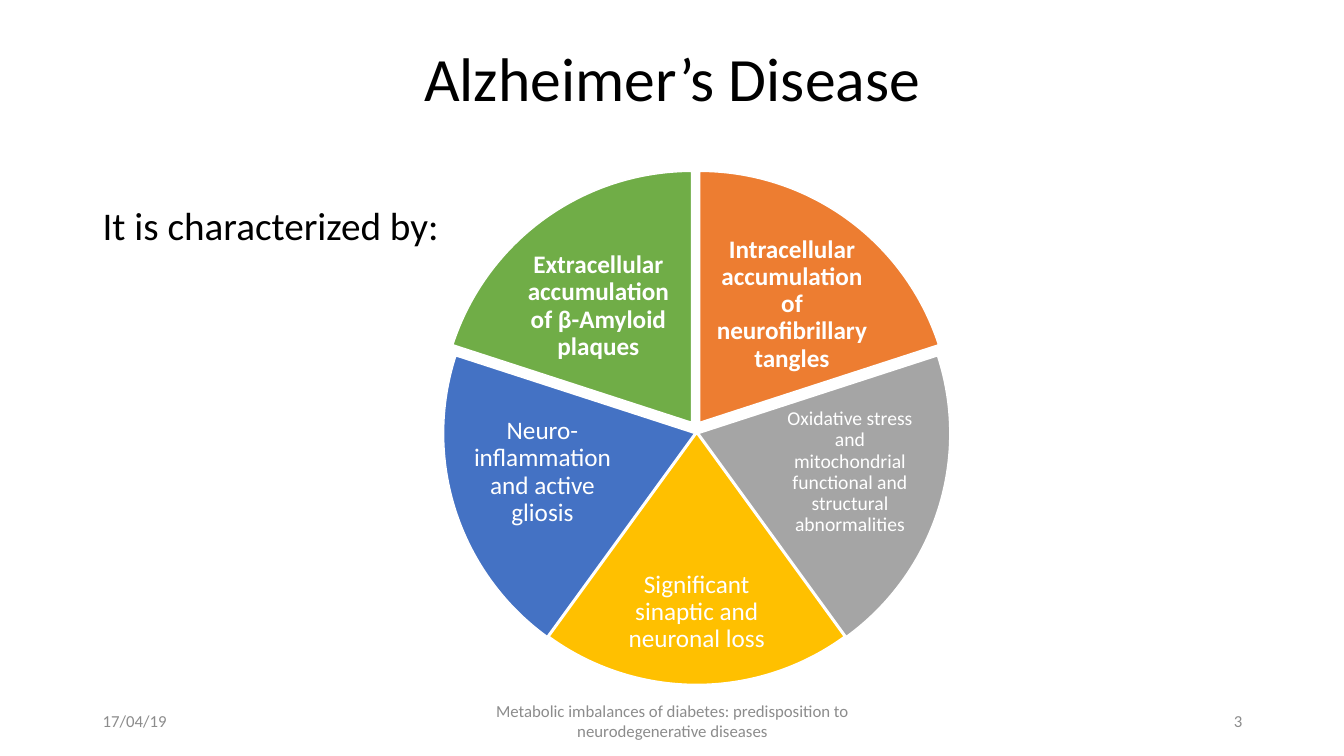
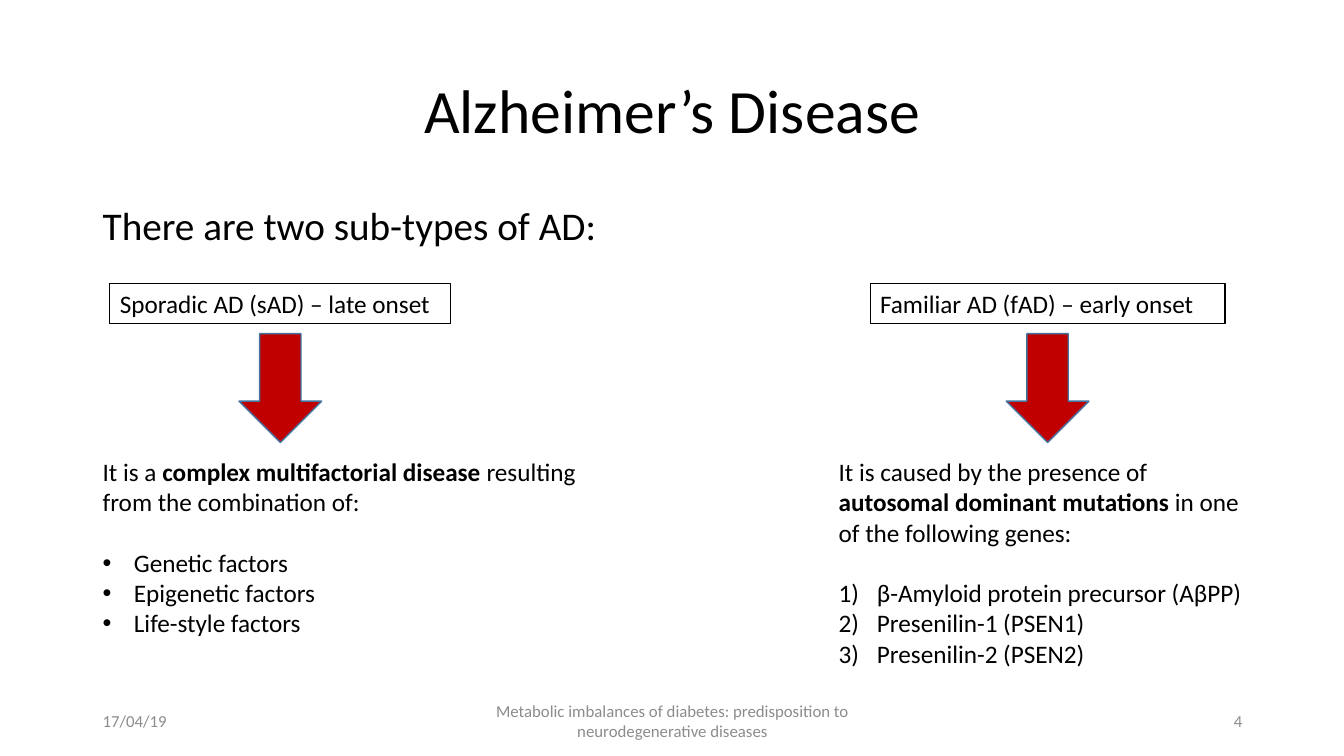
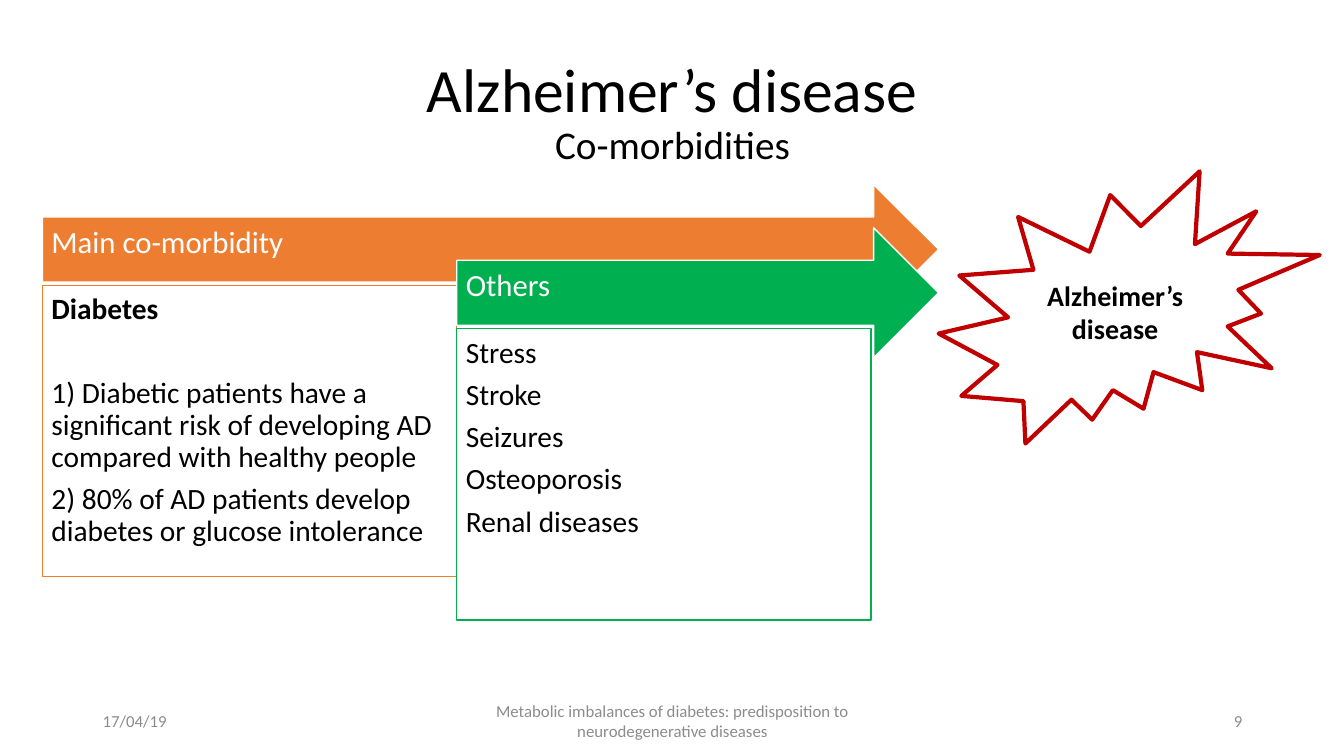
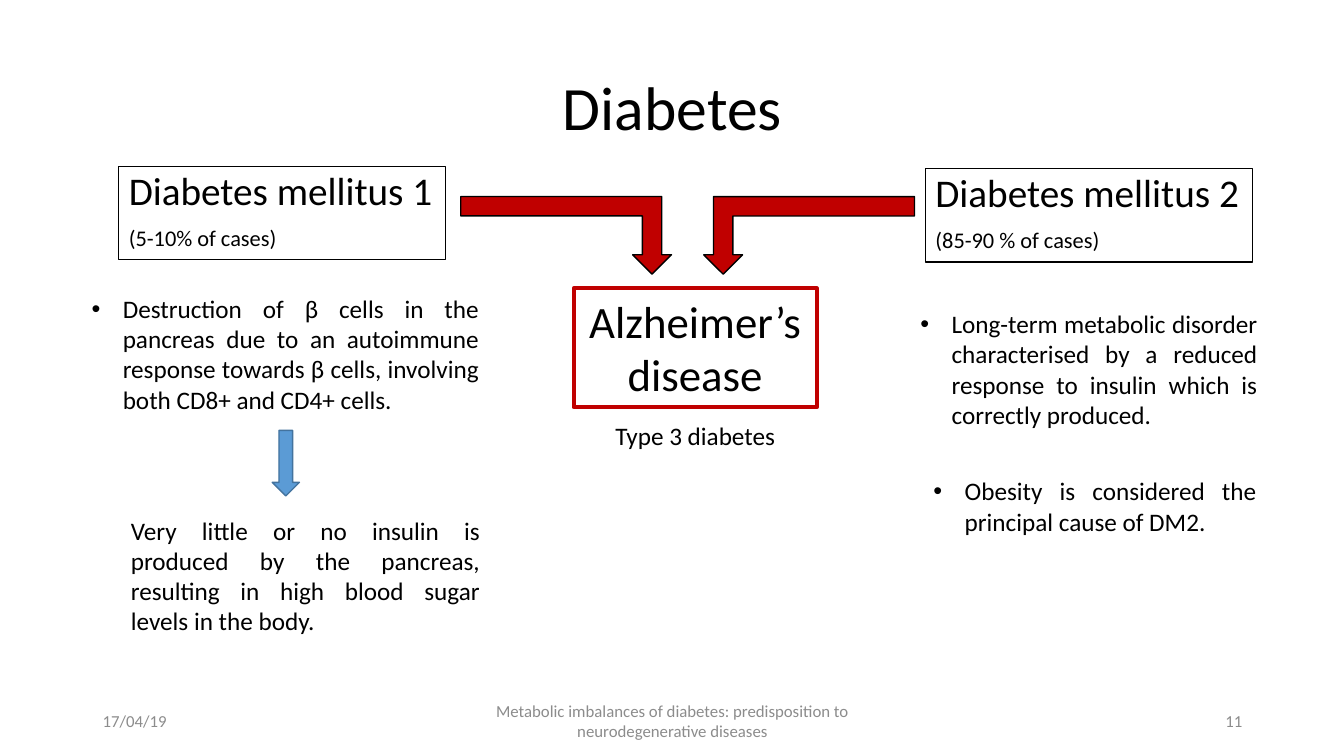
from lxml.etree import SubElement
from pptx import Presentation
from pptx.dml.color import RGBColor
from pptx.enum.shapes import MSO_SHAPE as SHAPE
from pptx.enum.text import MSO_ANCHOR as ANCHOR, PP_ALIGN as ALIGN
from pptx.oxml.ns import qn
from pptx.util import Inches, Pt

BLACK = RGBColor(0x00, 0x00, 0x00)
WHITE = RGBColor(0xFF, 0xFF, 0xFF)
GRAY = RGBColor(0x8C, 0x8C, 0x8C)
SILVER = RGBColor(0xA5, 0xA5, 0xA5)
ORANGE = RGBColor(0xED, 0x7D, 0x31)
YELLOW = RGBColor(0xFF, 0xC0, 0x00)
BLUE = RGBColor(0x44, 0x72, 0xC4)
LIGHT_BLUE = RGBColor(0x5B, 0x9B, 0xD5)
STEEL = RGBColor(0x43, 0x73, 0x9E)
LEAF = RGBColor(0x70, 0xAD, 0x47)
GREEN = RGBColor(0x00, 0xB0, 0x50)
RED = RGBColor(0xC0, 0x00, 0x00)
FONT = "Calibri"


def add_shape(s, kind, box, fill=None, line=BLACK, weight=1, adjust=(), rotation=0):
    sp = s.shapes.add_shape(kind, *map(Inches, box))
    sp.shadow.inherit = False
    sp.rotation = rotation
    for i, value in enumerate(adjust):
        sp.adjustments[i] = value
    if fill is None:
        sp.fill.background()
    else:
        sp.fill.solid()
        sp.fill.fore_color.rgb = fill
    sp.line.color.rgb = line
    sp.line.width = Pt(weight)
    return sp


def add_text(s, text, box=None, sp=None, sizes=(18,), color=BLACK, bold=False,
             align=ALIGN.LEFT, anchor=ANCHOR.TOP, inset=(0.1, 0.05, 0.1, 0.05),
             spacing=1, before=0, after=0, first_after=None,
             bullet=None, bullet_from=0, indent=0.31):
    sp = sp or s.shapes.add_textbox(*map(Inches, box))
    tf = sp.text_frame
    tf.word_wrap = True
    tf.vertical_anchor = anchor
    tf.margin_left, tf.margin_top, tf.margin_right, tf.margin_bottom = map(Inches, inset)
    for i, line in enumerate(text.split("\n")):
        p = tf.add_paragraph() if i else tf.paragraphs[0]
        p.alignment = align
        p.line_spacing = spacing
        p.space_before = Pt(before)
        p.space_after = Pt(after if i or first_after is None else first_after)
        for j, part in enumerate(line.split("*")):
            if part:
                r = p.add_run()
                r.text = part
                r.font.name = FONT
                r.font.size = Pt(sizes[min(i, len(sizes) - 1)])
                r.font.bold = bold or j % 2 == 1
                r.font.color.rgb = color
        if bullet and i >= bullet_from:
            pPr = p._p.get_or_add_pPr()
            pPr.set("marL", str(Inches(indent)))
            pPr.set("indent", str(-Inches(indent)))
            if bullet == "•":
                SubElement(pPr, qn("a:buFont"), typeface="Arial")
                SubElement(pPr, qn("a:buChar"), char=bullet)
            else:
                SubElement(pPr, qn("a:buAutoNum"), type=bullet)
    return sp


prs = Presentation()
prs.slide_width, prs.slide_height = Inches(13.33), Inches(7.5)

slides = []
for title, top, height, number in [
    ("Alzheimer’s Disease", 0.3, 1.01, "3"),
    ("Alzheimer’s Disease", 0.4, 1.45, "4"),
    ("Alzheimer’s disease\nCo-morbidities", 0.4, 1.45, "9"),
    ("Diabetes", 0.37, 1.45, "11"),
]:
    s = prs.slides.add_slide(prs.slide_layouts[6])
    add_text(s, title, (0.92, top, 11.5, height), sizes=(44, 28), spacing=0.9,
             align=ALIGN.CENTER, anchor=ANCHOR.MIDDLE)
    for text, left, width, align in [
        ("17/04/19", 0.92, 3, ALIGN.LEFT),
        ("Metabolic imbalances of diabetes: predisposition to neurodegenerative diseases",
         4.42, 4.5, ALIGN.CENTER),
        (number, 9.42, 3, ALIGN.RIGHT),
    ]:
        add_text(s, text, (left, 6.95, width, 0.4), sizes=(12,), color=GRAY,
                 align=align, anchor=ANCHOR.MIDDLE)
    slides.append(s)
features, subtypes, comorbidities, diabetes = slides

s = features
add_text(s, "It is characterized by:", (0.92, 2, 11.5, 4.76), sizes=(28,),
         spacing=0.9, before=10)
PIE_SIZE, FULL_TURN = 4.98, 216
slices = [
    ("Intracellular accumulation of neurofibrillary tangles", ORANGE, 4.45, 1.7,
     (7.01, 2.44, 1.69, 1.16), 18, True),
    ("Oxidative stress and mitochondrial functional and structural abnormalities",
     SILVER, 4.44, 1.81, (7.69, 4.06, 1.48, 1.25), 14, False),
    ("Significant sinaptic and neuronal loss", YELLOW, 4.42, 1.81,
     (6.02, 5.54, 1.78, 1.07), 18, False),
    ("Neuro-inflammation and active gliosis", BLUE, 4.4, 1.81,
     (4.64, 4.06, 1.48, 1.25), 18, False),
    ("Extracellular accumulation of β-Amyloid plaques", LEAF, 4.37, 1.7,
     (5.09, 2.46, 1.69, 1.16), 18, True),
]
step = FULL_TURN / len(slices)
for i, (text, fill, left, top, label_box, size, bold) in enumerate(slices):
    start = FULL_TURN * 0.75 + i * step
    add_shape(s, SHAPE.PIE, (left, top, PIE_SIZE, PIE_SIZE), fill, WHITE,
              adjust=(start % FULL_TURN, (start + step) % FULL_TURN))
    add_text(s, text, label_box, sizes=(size,), color=WHITE, bold=bold, spacing=0.9,
             align=ALIGN.CENTER, anchor=ANCHOR.MIDDLE, inset=(0.03,) * 4)

s = subtypes
add_text(s, "There are two sub-types of AD:", (0.92, 2, 5.15, 0.53), sizes=(28,),
         spacing=0.9, before=10)
for heading, left, width, arrow_left, text, text_left, text_width, bullet, indent in [
    ("Sporadic AD (sAD) – late onset", 1.09, 3.38, 2.37,
     "It is a *complex multifactorial disease *resulting from the combination of:\n"
     "Genetic factors\nEpigenetic factors\nLife-style factors",
     0.92, 5.15, "•", 0.31),
    ("Familiar AD (fAD) – early onset", 8.63, 3.52, 9.98,
     "It is caused by the presence of *autosomal dominant mutations *in one of the "
     "following genes:\nβ-Amyloid protein precursor (AβPP)\n"
     "Presenilin-1 (PSEN1)\nPresenilin-2 (PSEN2)",
     8.22, 4.34, "arabicParenR", 0.38),
]:
    sp = add_shape(s, SHAPE.RECTANGLE, (left, 2.81, width, 0.4), weight=0.75)
    add_text(s, heading, sp=sp)
    add_shape(s, SHAPE.DOWN_ARROW, (arrow_left, 3.31, 0.82, 1.08), RED, STEEL)
    add_text(s, text, (text_left, 4.48, text_width, 2.2), first_after=21.6,
             bullet=bullet, bullet_from=1, indent=indent)

s = comorbidities
sp = add_shape(s, SHAPE.EXPLOSION2, (9.31, 1.7, 3.78, 2.7), line=RED, weight=3)
add_text(s, "Alzheimer’s disease", sp=sp, sizes=(20,), bold=True,
         align=ALIGN.CENTER, anchor=ANCHOR.MIDDLE)
ARROW_END = 9.31
for heading, text, left, top, color, first_after in [
    ("Main co-morbidity",
     "*Diabetes*\n1) Diabetic patients have a significant risk of developing AD "
     "compared with healthy people\n"
     "2) 80% of AD patients develop diabetes or glucose intolerance",
     0.42, 1.83, ORANGE, 37.5),
    ("Others", "Stress\nStroke\nSeizures\nOsteoporosis\nRenal diseases",
     4.53, 2.26, GREEN, None),
]:
    sp = add_shape(s, SHAPE.RIGHT_ARROW, (left, top, ARROW_END - left, 1.29), color, WHITE)
    add_text(s, heading, sp=sp, sizes=(22,), color=WHITE, spacing=0.9, after=7.5,
             anchor=ANCHOR.MIDDLE, inset=(0.09, 0.09, 0.28, 0.21))
    sp = add_shape(s, SHAPE.RECTANGLE, (left, top + 1, 4.11, 2.89), WHITE, color)
    add_text(s, text, sp=sp, sizes=(21,), spacing=0.9, after=7.5,
             first_after=first_after, inset=(0.09,) * 4)

s = diabetes
for text, left, top in [
    ("Diabetes mellitus 1\n(5-10% of cases)", 1.18, 1.65),
    ("Diabetes mellitus 2\n(85-90 % of cases)", 9.18, 1.67),
]:
    sp = add_shape(s, SHAPE.RECTANGLE, (left, top, 3.24, 0.93), weight=0.75)
    add_text(s, text, sp=sp, sizes=(28, 16), spacing=0.9, before=10)
for text, box, bullet in [
    ("Destruction of β cells in the pancreas due to an autoimmune response towards "
     "β cells, involving both CD8+ and CD4+ cells.", (0.81, 2.86, 4.04, 1.31), "•"),
    ("Very little or no insulin is produced by the pancreas, resulting in high blood "
     "sugar levels in the body.", (1.2, 5.06, 3.66, 1.31), None),
    ("Long-term metabolic disorder characterised by a reduced response to insulin "
     "which is correctly produced.", (9.03, 3.01, 3.54, 1.31), "•"),
    ("Obesity is considered the principal cause of DM2.", (9.16, 4.67, 3.4, 0.71), "•"),
]:
    add_text(s, text, box, align=ALIGN.JUSTIFY, bullet=bullet)
add_shape(s, SHAPE.DOWN_ARROW, (2.7, 4.27, 0.27, 0.65), LIGHT_BLUE, STEEL)
add_shape(s, SHAPE.BENT_UP_ARROW, (6.98, 1.95, 2.09, 0.77), RED, rotation=180)
add_shape(s, SHAPE.BENT_ARROW, (5.23, 1.29, 0.77, 2.09), RED, rotation=90,
          adjust=(0.25, 0.25, 0.25, 0))
sp = add_shape(s, SHAPE.RECTANGLE, (5.69, 2.86, 2.41, 1.18), line=RED, weight=3)
add_text(s, "Alzheimer’s disease", sp=sp, sizes=(32,), align=ALIGN.CENTER)
add_text(s, "Type 3 diabetes", (5.95, 4.12, 1.89, 0.4), align=ALIGN.CENTER)

prs.save("out.pptx")
